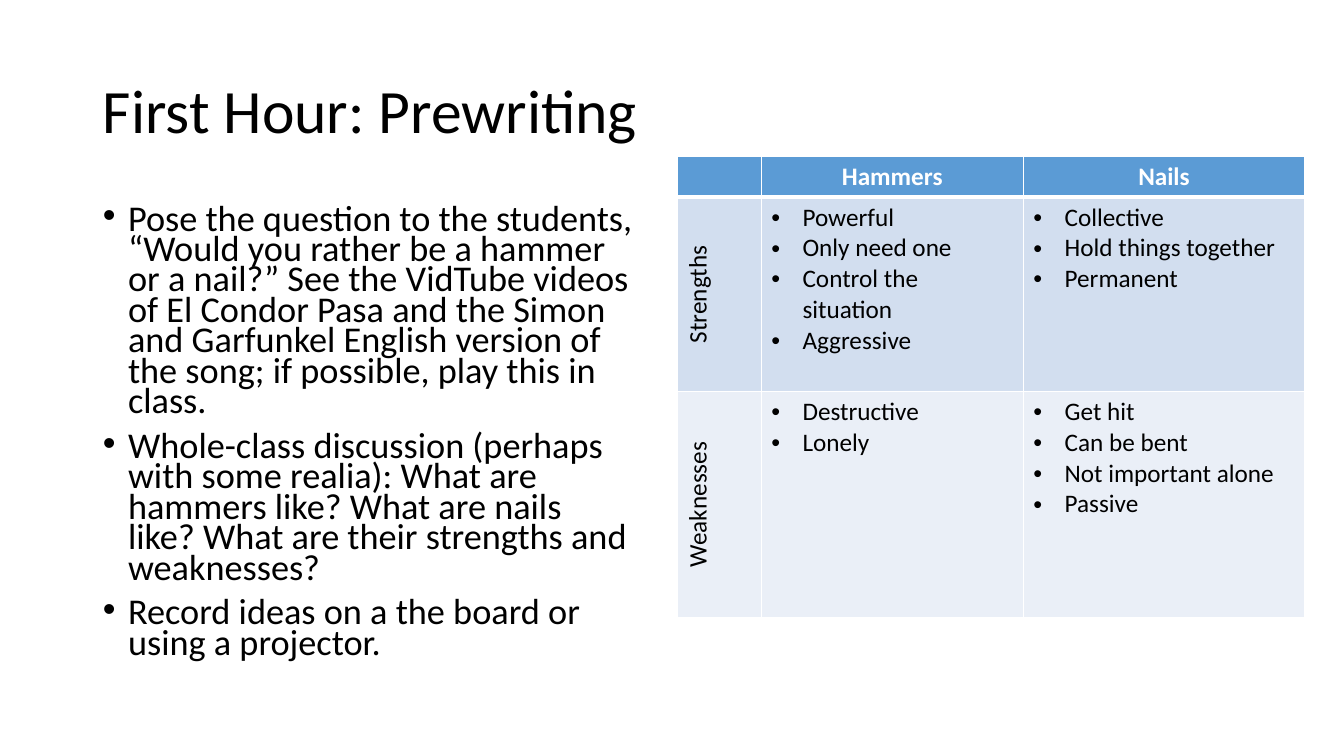
from lxml import etree
from pptx import Presentation
from pptx.dml.color import RGBColor
from pptx.enum.text import MSO_ANCHOR, MSO_AUTO_SIZE, PP_ALIGN
from pptx.oxml.ns import qn
from pptx.util import Inches, Pt

LEFT, CENTER = PP_ALIGN.LEFT, PP_ALIGN.CENTER
MIDDLE, TOP = MSO_ANCHOR.MIDDLE, MSO_ANCHOR.TOP
NO_FIT = MSO_AUTO_SIZE.NONE

BLACK = RGBColor(0, 0, 0)
WHITE = RGBColor(0xFF, 0xFF, 0xFF)
BLUE = RGBColor(0x5B, 0x9B, 0xD5)
PALE = RGBColor(0xD2, 0xDE, 0xEF)
MIST = RGBColor(0xEA, 0xEF, 0xF7)
FONT = "Calibri"

TITLE = "First Hour: Prewriting"
STEPS = [
    "Pose the question to the students, “Would you rather be a hammer or a nail?” "
    "See the VidTube videos of El Condor Pasa and the Simon and Garfunkel English "
    "version of the song; if possible, play this in class.",
    "Whole-class discussion (perhaps with some realia): What are hammers like? "
    "What are nails like? What are their strengths and weaknesses?",
    "Record ideas on a the board or using a projector.",
]
HEADS = ["", "Hammers", "Nails"]
TRAITS = [
    ("Strengths",
     ["Powerful", "Only need one", "Control the situation", "Aggressive"],
     ["Collective", "Hold things together", "Permanent"]),
    ("Weaknesses",
     ["Destructive", "Lonely"],
     ["Get hit", "Can be bent", "Not important alone", "Passive"]),
]
WIDTHS = [0.83, 2.6, 2.79]
HEIGHTS = [0.4, 1.93, 2.24]
FILLS = [BLUE, PALE, MIST]


def style(para, size, color=BLACK, bold=False, align=LEFT):
    para.alignment = align
    for run in para.runs:
        font = run.font
        font.name, font.size, font.bold = FONT, Pt(size), bold
        font.color.rgb = color


def bullet(para, indent):
    props = para._p.get_or_add_pPr()
    props.set("marL", str(Inches(indent)))
    props.set("indent", str(-Inches(indent)))
    etree.SubElement(props, qn("a:buFont"), typeface="Arial")
    etree.SubElement(props, qn("a:buChar"), char="•")


def border(cell, row):
    props = cell._tc.get_or_add_tcPr()
    widths = {"L": 1, "R": 1, "T": 3 if row == 1 else 1, "B": 3 if row == 0 else 1}
    for spot, (side, width) in enumerate(widths.items()):
        line = etree.Element(qn(f"a:ln{side}"), w=str(Pt(width)))
        fill = etree.SubElement(line, qn("a:solidFill"))
        etree.SubElement(fill, qn("a:srgbClr"), val=str(WHITE))
        props.insert(spot, line)


def place(shape, left, top, width, height):
    shape.left, shape.top = Inches(left), Inches(top)
    shape.width, shape.height = Inches(width), Inches(height)
    shape.text_frame.auto_size = NO_FIT


def add_text(slide):
    title, body = slide.placeholders
    place(title, 0.92, 0.4, 11.5, 1.45)
    title.text_frame.text = TITLE
    title.text_frame.vertical_anchor = MIDDLE
    para = title.text_frame.paragraphs[0]
    para.line_spacing = 0.9
    style(para, 44)

    place(body, 0.92, 2, 5.46, 4.76)
    body.text_frame.text = "\n".join(STEPS)
    body.text_frame.vertical_anchor = TOP
    for para in body.text_frame.paragraphs:
        para.line_spacing = 0.7
        para.space_before = Pt(10)
        style(para, 25.9)
        bullet(para, 0.25)


def add_grid(slide):
    frame = slide.shapes.add_table(
        3, 3, Inches(6.72), Inches(1.55), Inches(sum(WIDTHS)), Inches(sum(HEIGHTS)))
    table = frame.table
    for col, width in zip(table.columns, WIDTHS):
        col.width = Inches(width)
    for row, height in zip(table.rows, HEIGHTS):
        row.height = Inches(height)
    for r, items in enumerate([HEADS, *TRAITS]):
        for c, item in enumerate(items):
            cell = table.cell(r, c)
            cell.fill.solid()
            cell.fill.fore_color.rgb = FILLS[r]
            border(cell, r)
            listed = isinstance(item, list)
            cell.text_frame.text = "\n".join(item) if listed else item
            for para in cell.text_frame.paragraphs:
                style(para, 18, BLACK if r else WHITE, r == 0, LEFT if listed else CENTER)
                if listed:
                    bullet(para, 0.31)
            if r and c == 0:
                cell._tc.get_or_add_tcPr().set("vert", "vert270")


def main():
    deck = Presentation()
    deck.slide_width, deck.slide_height = Inches(13.33), Inches(7.5)
    slide = deck.slides.add_slide(deck.slide_layouts[1])
    add_text(slide)
    add_grid(slide)
    deck.save("out.pptx")


if __name__ == "__main__":
    main()
